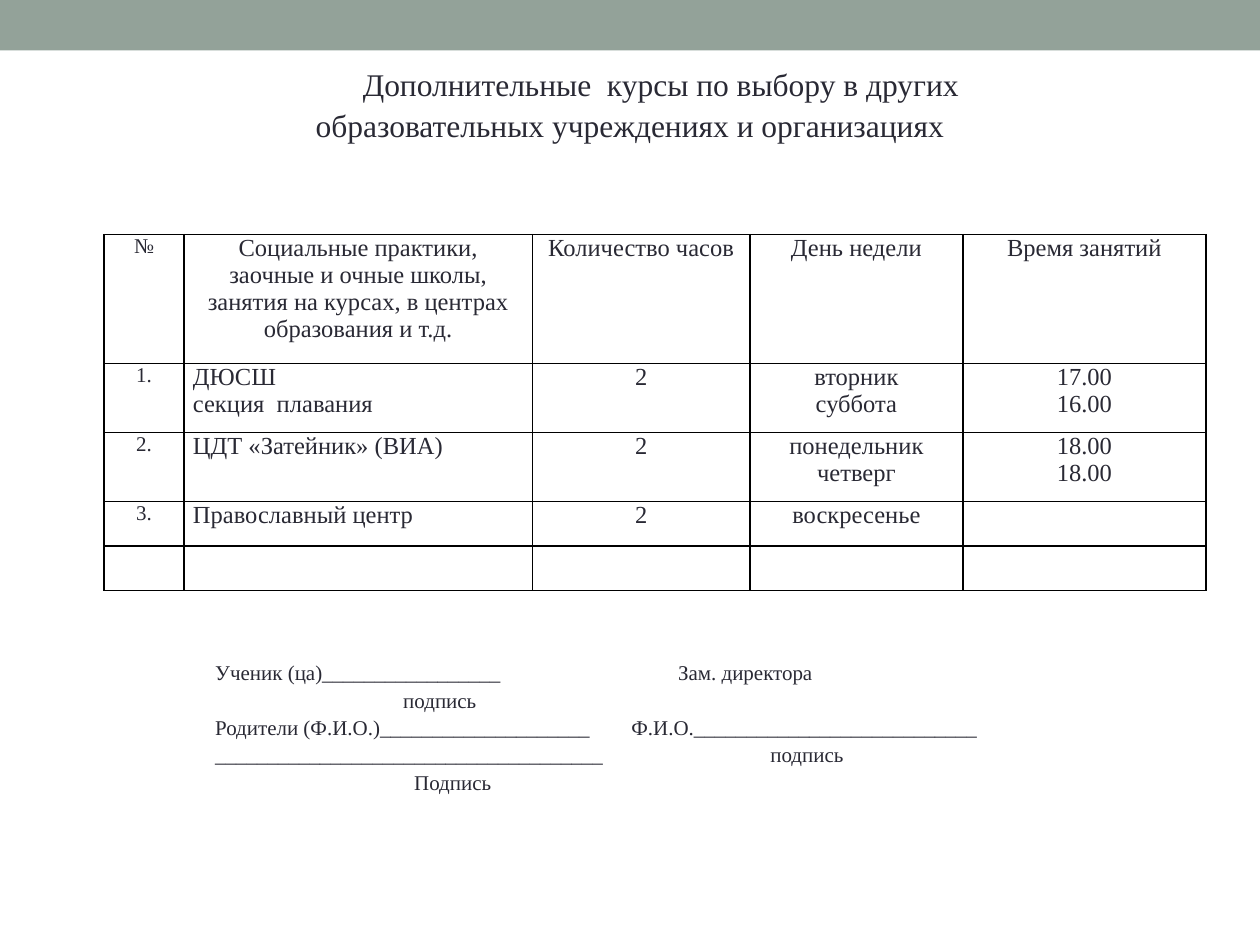
import pptx
import pptx.dml.color
import pptx.enum.shapes
import pptx.enum.text
import pptx.oxml
import pptx.oxml.ns
import pptx.util
from lxml import etree

Cm = pptx.util.Cm
Pt = pptx.util.Pt
Align = pptx.enum.text.PP_ALIGN

WHITE = pptx.dml.color.RGBColor(0xFF, 0xFF, 0xFF)
SAGE = pptx.dml.color.RGBColor(0x93, 0xA2, 0x99)
INK = pptx.dml.color.RGBColor(0x29, 0x29, 0x34)
BLACK = pptx.dml.color.RGBColor(0, 0, 0)

COLUMN_WIDTHS = [1.61, 7.02, 4.39, 4.29, 4.9]
ROW_HEIGHTS = [2.6, 1.39, 1.39, 0.9, 0.9]
COURSES = [
    ["№", "Социальные практики, заочные и очные школы, занятия на курсах, "
     "в центрах образования и т.д.", "Количество часов", "День недели", "Время занятий"],
    ["1.", "ДЮСШ\nсекция  плавания", "2", "вторник\nсуббота", "17.00\n16.00"],
    ["2.", "ЦДТ «Затейник» (ВИА)", "2", "понедельник\nчетверг", "18.00\n18.00"],
    ["3.", "Православный центр", "2", "воскресенье", ""],
    [""] * 5,
]
SIGNATURES = [
    ("Ученик (ца)" + "_" * 17 + "\tЗам. директора", 9.33),
    ("\tподпись", 3.79),
    ("Родители (Ф.И.О.)" + "_" * 20 + "\tФ.И.О." + "_" * 27, 8.39),
    ("_" * 37 + "\tподпись", 11.19),
    ("\tПодпись", 4.01),
]


def write_text(text_frame, text, font="Times New Roman", size=14, color=INK,
               align=Align.LEFT, spacing=1.0, indent=0, tabs=()):
    for index, line in enumerate(text.split("\n")):
        paragraph = text_frame.paragraphs[0] if index == 0 else text_frame.add_paragraph()
        paragraph.alignment = align
        paragraph.line_spacing = spacing
        paragraph.space_before = paragraph.space_after = Pt(0)
        run = paragraph.add_run()
        run.text = line
        run.font.name = font
        run.font.size = Pt(size)
        run.font.color.rgb = color
        properties = paragraph._p.get_or_add_pPr()
        if indent:
            properties.set("marL", "0")
            properties.set("indent", str(Cm(indent)))
        if tabs:
            tab_list = etree.SubElement(properties, pptx.oxml.ns.qn("a:tabLst"))
            etree.SubElement(tab_list, pptx.oxml.ns.qn("a:tab"),
                             pos=str(Cm(tabs[index])), algn="l")


class SlideBuilder:
    border_width = Pt(1)
    cell_margin = Cm(0.18)
    text_spacing = 1.09

    def __init__(self, presentation):
        self.slide = presentation.slides.add_slide(presentation.slide_layouts[5])
        self.slide.background.fill.solid()
        self.slide.background.fill.fore_color.rgb = WHITE

    def add_bar(self, left, top, width, height, color):
        shape = self.slide.shapes.add_shape(
            pptx.enum.shapes.MSO_SHAPE.RECTANGLE, Cm(left), Cm(top), Cm(width), Cm(height))
        shape.shadow.inherit = False
        shape.fill.solid()
        shape.fill.fore_color.rgb = color
        shape.line.fill.background()

    def add_title(self, left, top, width, height, text):
        title = self.slide.shapes.title
        title.left, title.top, title.width, title.height = map(Cm, (left, top, width, height))
        self.prepare_frame(title.text_frame)
        write_text(title.text_frame, text, size=18, align=Align.CENTER,
                   spacing=self.text_spacing, indent=1.25)

    def add_signatures(self, left, top, width, height, lines):
        shape = self.slide.shapes.add_textbox(Cm(left), Cm(top), Cm(width), Cm(height))
        self.prepare_frame(shape.text_frame)
        texts, tabs = zip(*lines)
        write_text(shape.text_frame, "\n".join(texts), size=12,
                   spacing=self.text_spacing, tabs=tabs)

    def prepare_frame(self, text_frame):
        text_frame.word_wrap = True
        text_frame.auto_size = pptx.enum.text.MSO_AUTO_SIZE.NONE
        text_frame.vertical_anchor = pptx.enum.text.MSO_ANCHOR.TOP

    def add_table(self, left, top, rows, widths, heights):
        table = self.slide.shapes.add_table(
            len(rows), len(widths), Cm(left), Cm(top), Cm(sum(widths)), Cm(sum(heights))).table
        table.first_row = False
        table.horz_banding = False
        for column, width in zip(table.columns, widths):
            column.width = Cm(width)
        for row, height in zip(table.rows, heights):
            row.height = Cm(height)
        for row_index, row in enumerate(rows):
            for column_index, text in enumerate(row):
                cell = table.cell(row_index, column_index)
                self.format_cell(cell)
                is_name = column_index == 1 and row_index > 0
                write_text(cell.text_frame, text, size=12 if column_index == 0 else 14,
                           align=Align.LEFT if is_name else Align.CENTER)

    def format_cell(self, cell):
        cell.margin_left = cell.margin_right = self.cell_margin
        cell.margin_top = cell.margin_bottom = 0
        cell.fill.background()
        properties = cell._tc.get_or_add_tcPr()
        for index, side in enumerate(("lnL", "lnR", "lnT", "lnB")):
            properties.insert(index, pptx.oxml.parse_xml(
                f'<a:{side} {pptx.oxml.ns.nsdecls("a")} w="{self.border_width}">'
                f'<a:solidFill><a:srgbClr val="{BLACK}"/></a:solidFill></a:{side}>'))


def main():
    presentation = pptx.Presentation()
    presentation.slide_width = Cm(25.4)
    presentation.slide_height = Cm(19.05)
    builder = SlideBuilder(presentation)
    builder.add_bar(0, 0, 25.4, 1.02, SAGE)
    builder.add_title(5.1, 1.12, 15.2, 1.8, "Дополнительные  курсы по выбору в других "
                      "образовательных учреждениях и организациях")
    builder.add_table(2.1, 4.73, COURSES, COLUMN_WIDTHS, ROW_HEIGHTS)
    builder.add_signatures(4.09, 13.13, 18, 3.33, SIGNATURES)
    presentation.save("out.pptx")


if __name__ == "__main__":
    main()
